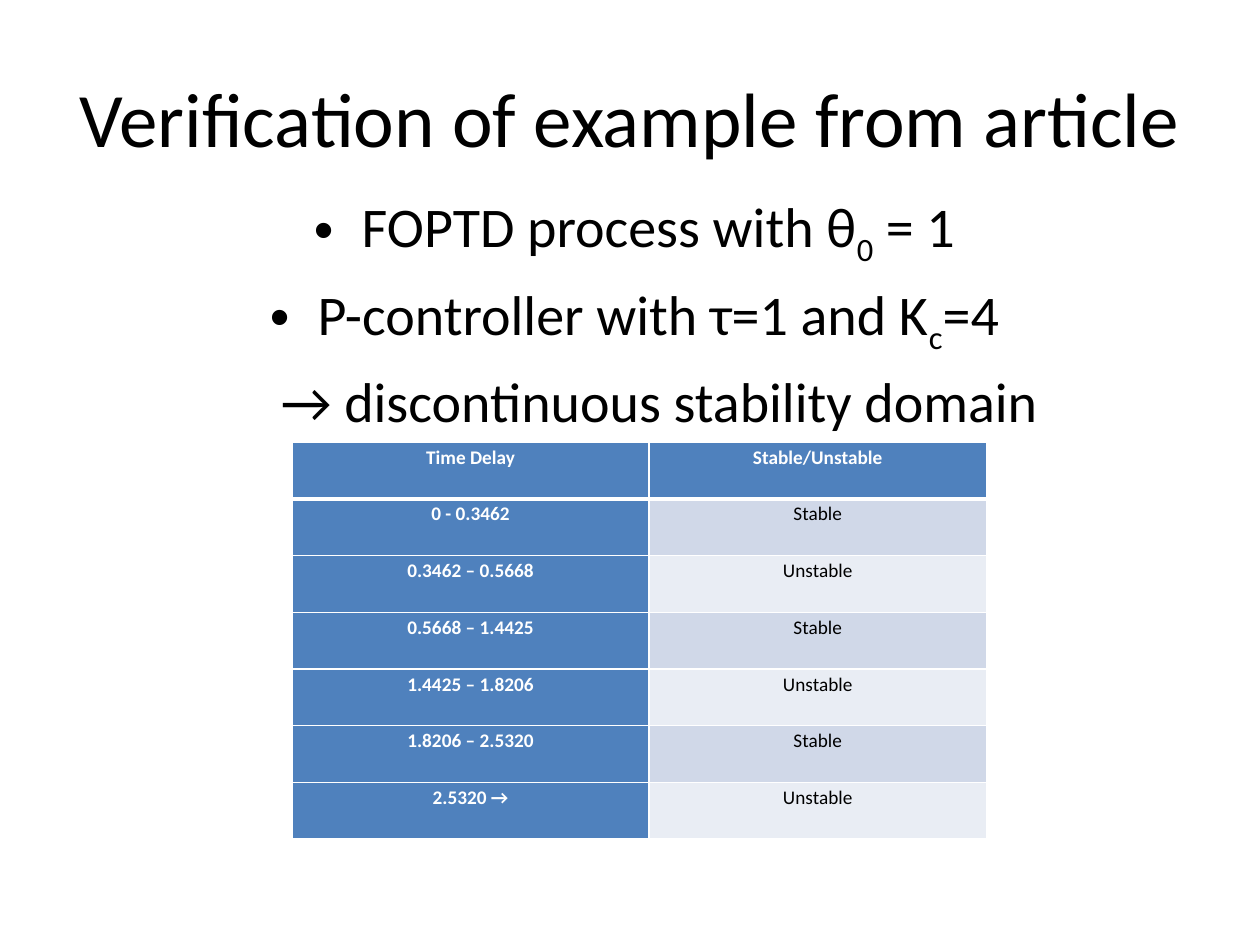
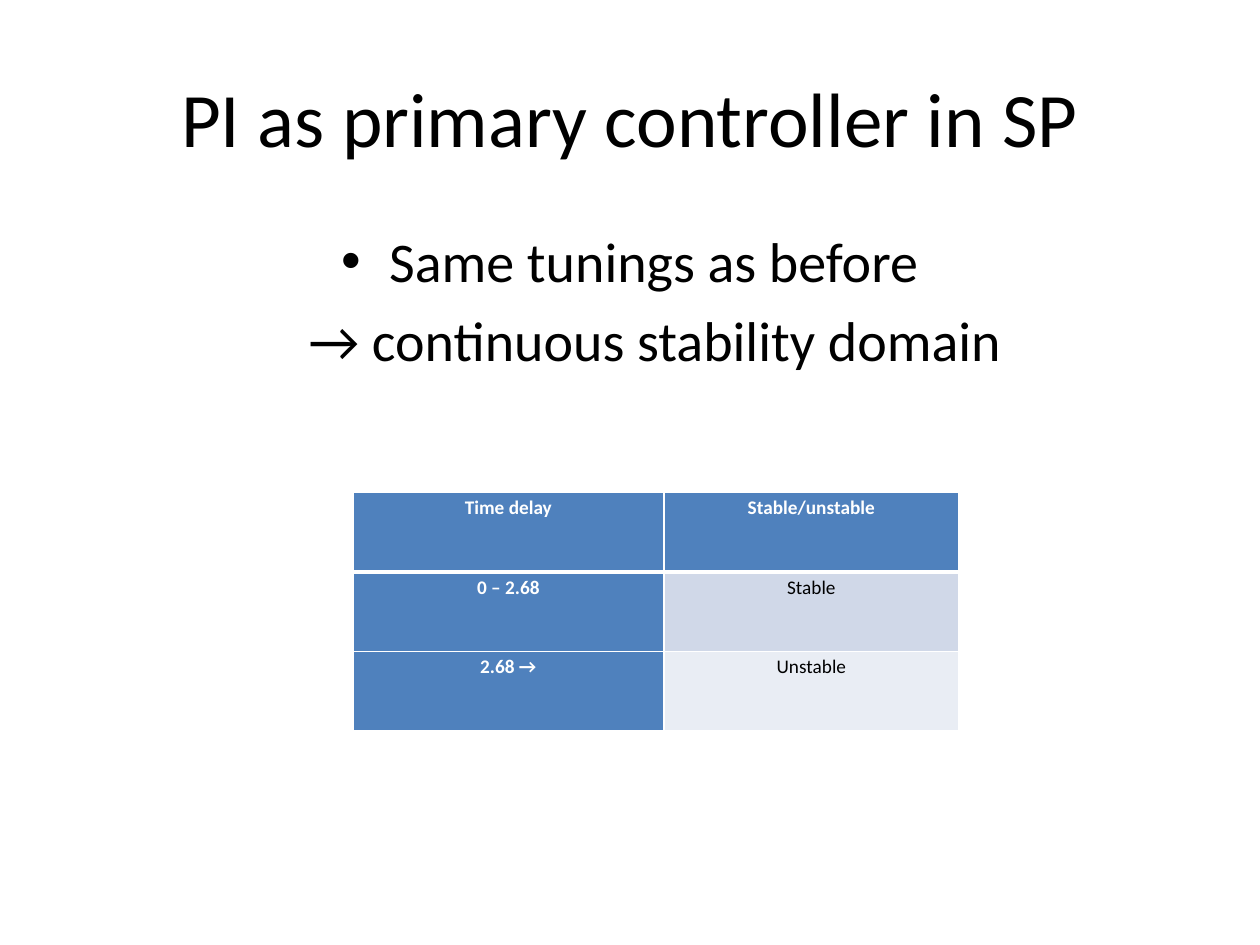
import pptx
import pptx.dml.color
import pptx.enum.text
import pptx.oxml.ns
import pptx.util
from lxml import etree

Inches, Pt = pptx.util.Inches, pptx.util.Pt
ALIGN, ANCHOR = pptx.enum.text.PP_ALIGN, pptx.enum.text.MSO_ANCHOR

FONT = "Calibri"
BLACK, WHITE, BLUE = "000000", "FFFFFF", "4F81BD"
BANDS = ("D0D8E8", "E9EDF4")
TITLE_BOX = (0.5, 0.3, 9, 1.25)
HANGING, CONCLUSION_INDENT = 0.38, 0.4

# In each bullet, every second piece is a subscript.
SLIDES = [
    {
        "title": "Verification of example from article",
        "body_box": (1.06, 1.47, 7.95, 5.59),
        "bullets": [
            ["FOPTD process with θ", "0", " = 1"],
            ["P-controller with τ=1 and K", "c", "=4"],
        ],
        "conclusion": "→ discontinuous stability domain",
        "table_at": (2.32, 3.51),
        "columns": (2.83, 2.68),
        "row_height": 0.45,
        "rows": [
            ("Time Delay", "Stable/Unstable"),
            ("0 - 0.3462", "Stable"),
            ("0.3462 – 0.5668", "Unstable"),
            ("0.5668 – 1.4425", "Stable"),
            ("1.4425 – 1.8206", "Unstable"),
            ("1.8206 – 2.5320", "Stable"),
            ("2.5320 →", "Unstable"),
        ],
    },
    {
        "title": "PI as primary controller in SP",
        "body_box": (0.5, 1.75, 9, 4.95),
        "bullets": [["Same tunings as before"]],
        "conclusion": "→ continuous stability domain",
        "table_at": (2.8, 3.91),
        "columns": (2.47, 2.34),
        "row_height": 0.63,
        "rows": [
            ("Time delay", "Stable/unstable"),
            ("0 – 2.68", "Stable"),
            ("2.68 →", "Unstable"),
        ],
    },
]


def rgb(color):
    return pptx.dml.color.RGBColor.from_string(color)


def add_xml(parent, tag, **attributes):
    return etree.SubElement(parent, pptx.oxml.ns.qn(tag), attributes)


def style(p, size, color=BLACK, bold=False):
    p.alignment = ALIGN.CENTER
    for r in p.runs:
        r.font.name, r.font.size, r.font.bold = FONT, Pt(size), bold
        r.font.color.rgb = rgb(color)


def add_text_frame(slide, box, anchor):
    tf = slide.shapes.add_textbox(*map(Inches, box)).text_frame
    tf.word_wrap = True
    tf.vertical_anchor = anchor
    return tf


def indent(p, left, first=0):
    pPr = p._p.get_or_add_pPr()
    pPr.set("marL", str(Inches(left)))
    pPr.set("indent", str(Inches(first)))
    return pPr


def add_body(slide, box, bullets, conclusion):
    tf = add_text_frame(slide, box, ANCHOR.TOP)
    for i, pieces in enumerate(bullets + [[conclusion]]):
        p = tf.paragraphs[0] if i == 0 else tf.add_paragraph()
        for j, piece in enumerate(pieces):
            r = p.add_run()
            r.text = piece
            if j % 2:
                r._r.get_or_add_rPr().set("baseline", "-25000")
        style(p, 32)
        p.space_before = Pt(6.4)
        if i < len(bullets):
            pPr = indent(p, HANGING, -HANGING)
            add_xml(pPr, "a:buFont", typeface="Arial")
            add_xml(pPr, "a:buChar", char="•")
        else:
            indent(p, CONCLUSION_INDENT)


def set_borders(cell, row):
    tcPr = cell._tc.get_or_add_tcPr()
    widths = {"L": 1, "R": 1, "T": 3 if row == 1 else 1, "B": 3 if row == 0 else 1}
    for side, width in widths.items():
        ln = add_xml(tcPr, f"a:ln{side}", w=str(Pt(width)))
        add_xml(add_xml(ln, "a:solidFill"), "a:srgbClr", val=WHITE)


def add_stability_table(slide, at, columns, row_height, rows):
    box = (*at, sum(columns), row_height * len(rows))
    table = slide.shapes.add_table(len(rows), len(columns), *map(Inches, box)).table
    for column, width in zip(table.columns, columns):
        column.width = Inches(width)
    for i, row in enumerate(rows):
        table.rows[i].height = Inches(row_height)
        for j, text in enumerate(row):
            cell = table.cell(i, j)
            heading = i == 0 or j == 0
            set_borders(cell, i)
            cell.fill.solid()
            cell.fill.fore_color.rgb = rgb(BLUE if heading else BANDS[(i - 1) % 2])
            cell.margin_left = cell.margin_right = Inches(0.07)
            cell.margin_top = cell.margin_bottom = 0
            p = cell.text_frame.paragraphs[0]
            p.text = text
            p.line_spacing = 1.15
            style(p, 11, WHITE if heading else BLACK, heading)


def main():
    prs = pptx.Presentation()
    prs.slide_width, prs.slide_height = Inches(10), Inches(7.5)
    for content in SLIDES:
        slide = prs.slides.add_slide(prs.slide_layouts[6])
        p = add_text_frame(slide, TITLE_BOX, ANCHOR.MIDDLE).paragraphs[0]
        p.text = content["title"]
        style(p, 44)
        add_body(slide, content["body_box"], content["bullets"], content["conclusion"])
        add_stability_table(slide, content["table_at"], content["columns"],
                            content["row_height"], content["rows"])
    prs.save("out.pptx")


if __name__ == "__main__":
    main()
